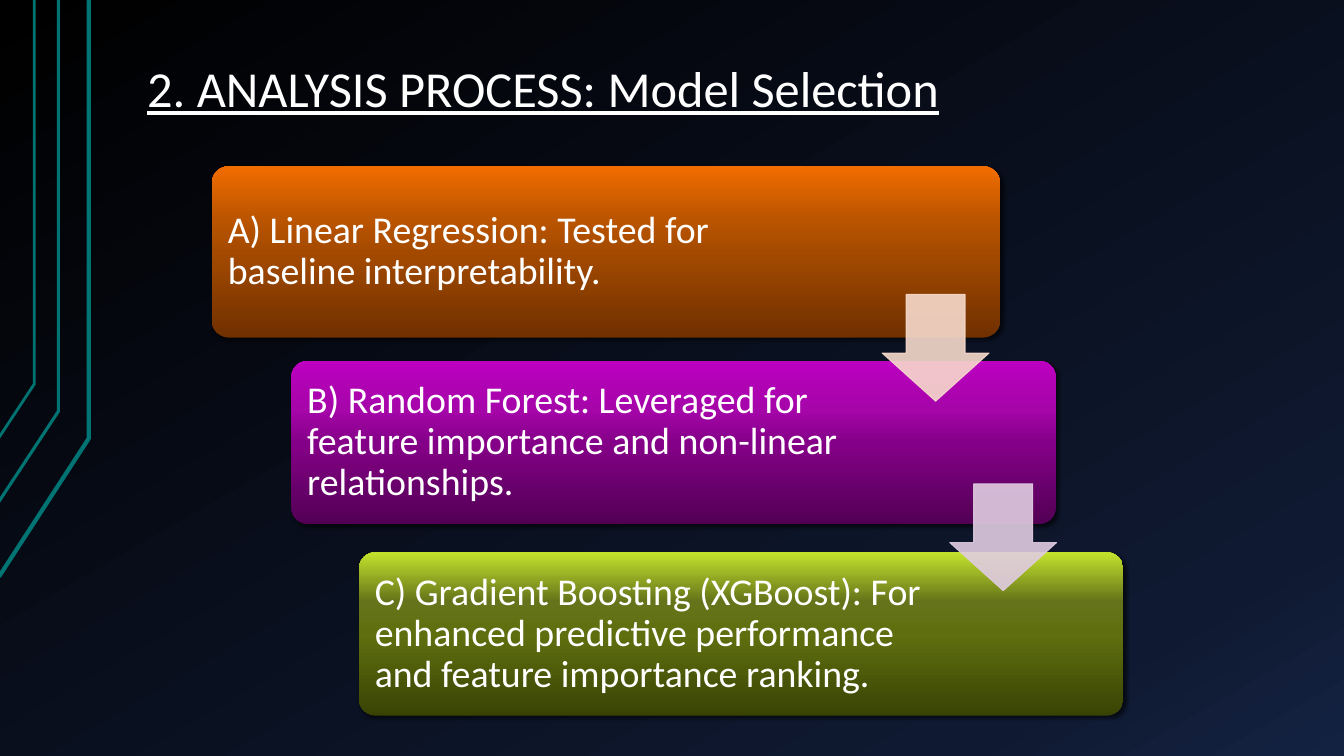
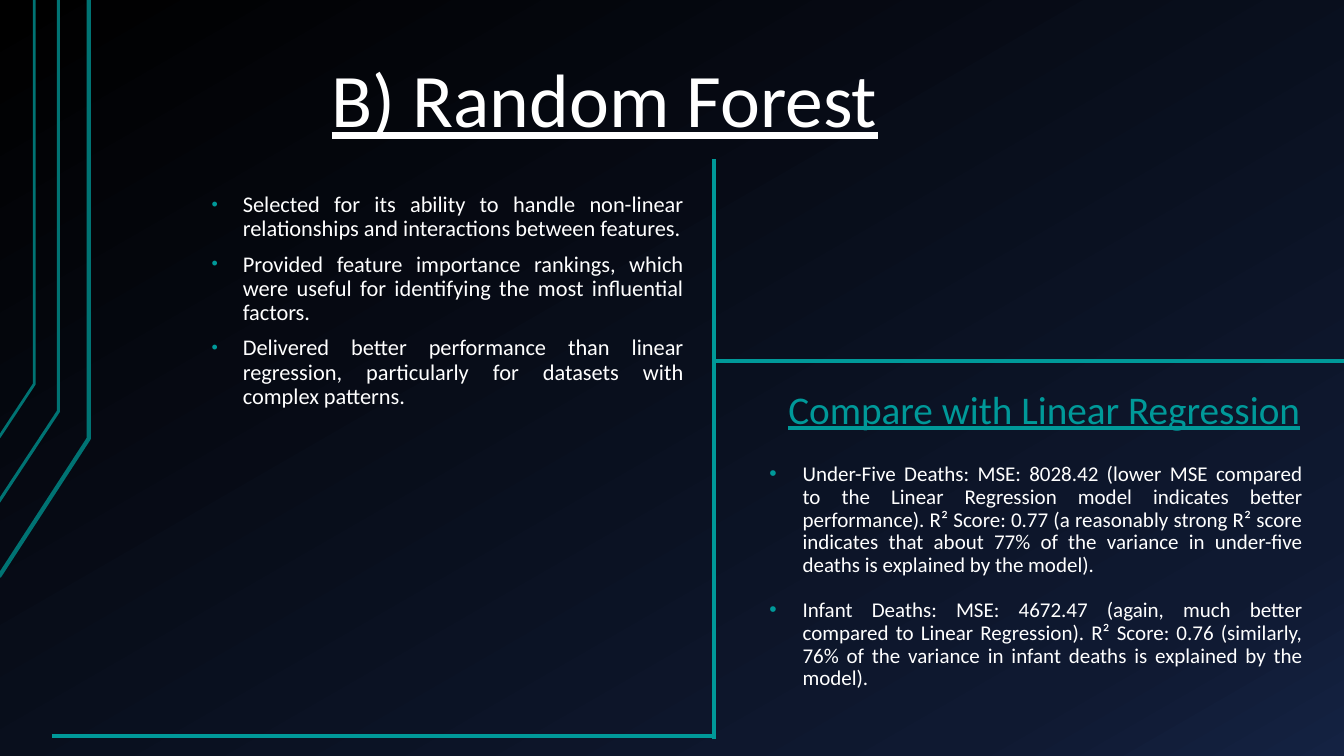
from lxml.etree import SubElement
from pptx import Presentation
from pptx.dml.color import RGBColor
from pptx.enum.shapes import MSO_CONNECTOR, MSO_SHAPE
from pptx.enum.text import MSO_ANCHOR, MSO_AUTO_SIZE, PP_ALIGN
from pptx.oxml.ns import qn
from pptx.util import Pt

PX = 9144
FONT = "Calibri"
COLORS = {"text": "FFFFFF", "accent": "009999", "rail": "007373", "shadow": "000000"}
BACKGROUND = [(0, "000000"), (85, "0F1931"), (100, "142242")]
RAILS = [
    ([(-1, 572), (88, 435), (88, 0)], 3),
    ([(-2, 499), (58, 408), (58, 0)], 2.25),
    ([(-1, 434), (34, 381), (34, 0)], 2),
]
TITLE_INSETS = (13, 7, 13, 7)
PLAIN_INSETS = (10, 5, 10, 5)
STEP_INSETS = (11, 11, 183, 11)

SELECTION_TITLE = ("2. ANALYSIS PROCESS: Model Selection", (133, 30, 1133, 95), 36)
STEPS = [
    ("A) Linear Regression: Tested for baseline interpretability.",
     (210, 165, 782, 170), ("703000", "A44A00", "BC5500", "F26D00")),
    ("B) Random Forest: Leveraged for feature importance and non-linear relationships.",
     (289, 358, 758, 162), ("520054", "850088", "A505A9", "BC00C0")),
    ("C) Gradient Boosting (XGBoost): For enhanced predictive performance "
     "and feature importance ranking.",
     (356, 548, 758, 162), ("394404", "5F6F0F", "65741A", "C4E32D")),
]
STEP_STOPS = (0, 50, 70, 100)
ARROWS = [((875, 292, 106, 106), "F7DACC"), ((942, 480, 106, 106), "E0CCE1")]

FOREST_TITLE = ("B) Random Forest", (316, 28, 667, 122), 54)
COMPARE_HEADING = ("Compare with Linear Regression", (772, 377, 533, 57), 28)
BULLET_LISTS = [
    {
        "frame": (133, 187, 555, 247), "insets": PLAIN_INSETS,
        "size": 16, "before": 8, "margin": 98, "hanging": 31, "bullet": 80,
        "items": [
            "Selected for its ability to handle non-linear relationships and "
            "interactions between features.",
            "Provided feature importance rankings, which were useful for "
            "identifying the most influential factors.",
            "Delivered better performance than linear regression, particularly "
            "for datasets with complex patterns.",
        ],
    },
    {
        "frame": (750, 453, 555, 270), "insets": TITLE_INSETS,
        "size": 15, "before": 16, "margin": 33, "hanging": 33, "bullet": 100,
        "items": [
            "Under-Five Deaths: MSE: 8028.42 (lower MSE compared to the Linear "
            "Regression model indicates better performance). R² Score: 0.77 (a "
            "reasonably strong R² score indicates that about 77% of the variance "
            "in under-five deaths is explained by the model).",
            "Infant Deaths: MSE: 4672.47 (again, much better compared to Linear "
            "Regression). R² Score: 0.76 (similarly, 76% of the variance in "
            "infant deaths is explained by the model).",
        ],
    },
]
DIVIDERS = [(708, 158, 708, 733), (52, 730, 708, 730), (708, 358, 1333, 358)]


def px(values):
    return [value * PX for value in values]


def rgb(color):
    return RGBColor.from_string(color)


def set_gradient(fill, element, stops, angle):
    fill.gradient()
    fill.gradient_angle = 360 - angle
    stop_list = element.find(".//" + qn("a:gsLst"))
    stop_list.clear()
    for position, color in stops:
        stop = SubElement(stop_list, qn("a:gs"), pos=str(position * 1000))
        SubElement(stop, qn("a:srgbClr"), val=color)


def set_frame(text_frame, insets, anchor=MSO_ANCHOR.TOP):
    text_frame.word_wrap = True
    text_frame.auto_size = MSO_AUTO_SIZE.NONE
    text_frame.vertical_anchor = anchor
    (text_frame.margin_left, text_frame.margin_top,
     text_frame.margin_right, text_frame.margin_bottom) = px(insets)


def set_text(para, text, size, color="text", underline=False,
             align=PP_ALIGN.LEFT, spacing=0.9):
    para.text = text
    para.alignment = align
    para.line_spacing = spacing
    for span in para.runs:
        span.font.name = FONT
        span.font.size = Pt(size)
        span.font.underline = underline
        span.font.color.rgb = rgb(COLORS[color])


def add_bullet(para, margin, hanging, percent):
    properties = para._p.get_or_add_pPr()
    properties.set("marL", str(margin * PX))
    properties.set("indent", str(-hanging * PX))
    color = SubElement(properties, qn("a:buClr"))
    SubElement(color, qn("a:srgbClr"), val=COLORS["accent"])
    SubElement(properties, qn("a:buSzPct"), val=str(percent * 1000))
    SubElement(properties, qn("a:buFont"), typeface="Arial")
    SubElement(properties, qn("a:buChar"), char="•")


def add_page(deck, title, frame, size):
    page = deck.slides.add_slide(deck.slide_layouts[5])
    box = page.shapes.title
    box.left, box.top, box.width, box.height = px(frame)
    set_frame(box.text_frame, TITLE_INSETS, MSO_ANCHOR.BOTTOM)
    set_text(box.text_frame.paragraphs[0], title, size, underline=True)
    return page


def set_theme(deck, page):
    master = deck.slide_master
    set_gradient(master.background.fill, master.element, BACKGROUND, 60)
    for index, (points, width) in enumerate(RAILS):
        builder = page.shapes.build_freeform(*points[0], scale=PX)
        builder.add_line_segments(points[1:], close=False)
        rail = builder.convert_to_shape()
        rail.shadow.inherit = False
        rail.fill.background()
        rail.line.color.rgb = rgb(COLORS["rail"])
        rail.line.width = Pt(width)
        page.slide_layout.shapes.element.insert(2 + index, rail.element)


def add_shadow(shape):
    shape.shadow.inherit = False
    effects = shape.element.spPr.find(qn("a:effectLst"))
    shadow = SubElement(effects, qn("a:outerShdw"), blurRad=str(Pt(3)),
                        dist=str(Pt(2)), dir="2700000", rotWithShape="0")
    color = SubElement(shadow, qn("a:srgbClr"), val=COLORS["shadow"])
    SubElement(color, qn("a:alpha"), val="60000")


def add_step(page, text, frame, colors):
    box = page.shapes.add_shape(MSO_SHAPE.ROUNDED_RECTANGLE, *px(frame))
    box.adjustments[0] = 0.1
    set_gradient(box.fill, box.element, zip(STEP_STOPS, colors), 270)
    box.line.fill.background()
    add_shadow(box)
    set_frame(box.text_frame, STEP_INSETS, MSO_ANCHOR.MIDDLE)
    set_text(box.text_frame.paragraphs[0], text, 27)


def add_arrow(page, frame, color):
    arrow = page.shapes.add_shape(MSO_SHAPE.DOWN_ARROW, *px(frame))
    arrow.shadow.inherit = False
    arrow.adjustments[0], arrow.adjustments[1] = 0.55, 0.45
    arrow.fill.solid()
    arrow.fill.fore_color.rgb = rgb(color)
    arrow.line.color.rgb = rgb(color)
    arrow.line.width = Pt(0.75)
    for tint in arrow.element.spPr.iter(qn("a:srgbClr")):
        SubElement(tint, qn("a:alpha"), val="90000")


def add_bullet_list(page, block):
    box = page.shapes.add_textbox(*px(block["frame"]))
    set_frame(box.text_frame, block["insets"])
    for index, item in enumerate(block["items"]):
        para = box.text_frame.add_paragraph() if index else box.text_frame.paragraphs[0]
        set_text(para, item, block["size"], align=PP_ALIGN.JUSTIFY)
        para.space_before = Pt(block["before"])
        add_bullet(para, block["margin"], block["hanging"], block["bullet"])


def add_heading(page, text, frame, size):
    box = page.shapes.add_textbox(*px(frame))
    set_frame(box.text_frame, PLAIN_INSETS)
    set_text(box.text_frame.paragraphs[0], text, size, "accent", True, spacing=1.0)


def add_divider(page, ends):
    line = page.shapes.add_connector(MSO_CONNECTOR.STRAIGHT, *px(ends))
    line.line.color.rgb = rgb(COLORS["accent"])
    line.line.width = Pt(3.25)
    SubElement(line.element.spPr, qn("a:effectLst"))


def main():
    deck = Presentation()
    deck.slide_width, deck.slide_height = px((1333, 750))

    selection = add_page(deck, *SELECTION_TITLE)
    set_theme(deck, selection)
    for step in STEPS:
        add_step(selection, *step)
    for arrow in ARROWS:
        add_arrow(selection, *arrow)

    forest = add_page(deck, *FOREST_TITLE)
    for block in BULLET_LISTS:
        add_bullet_list(forest, block)
    add_heading(forest, *COMPARE_HEADING)
    for ends in DIVIDERS:
        add_divider(forest, ends)

    deck.save("out.pptx")


if __name__ == "__main__":
    main()
